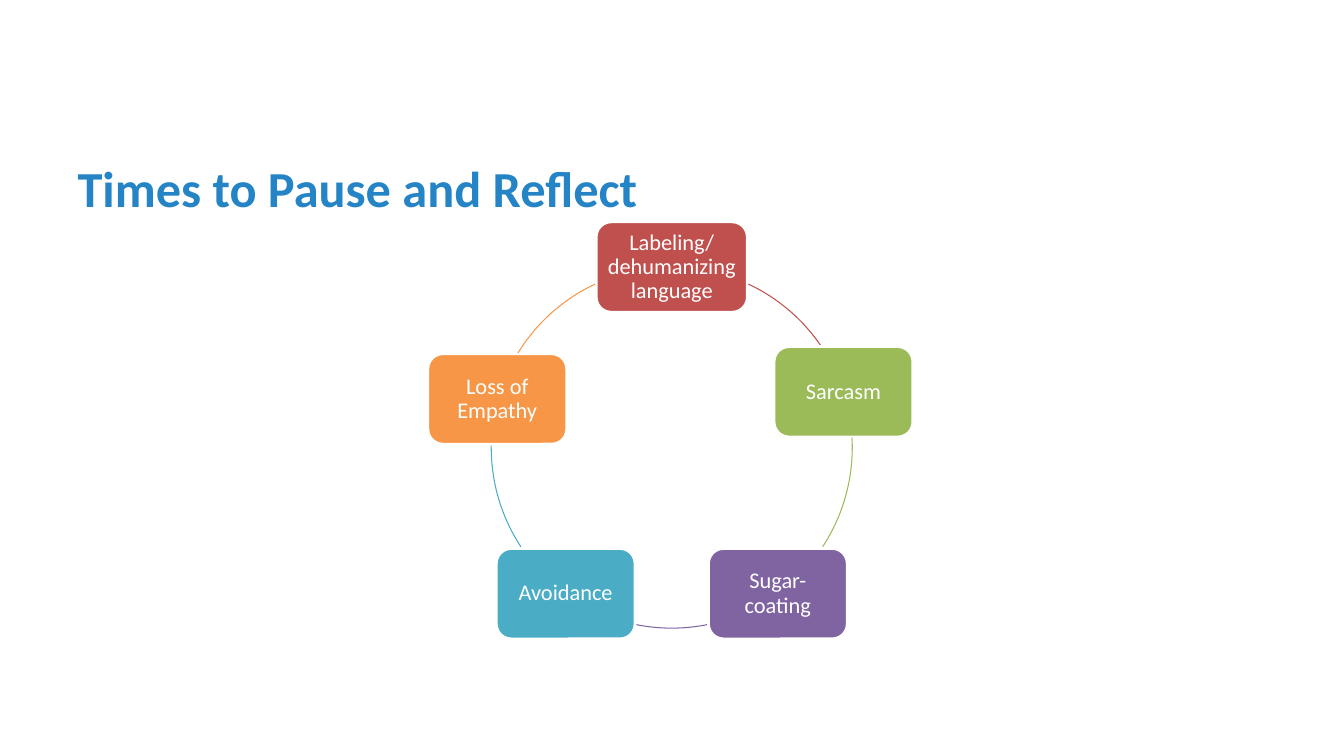
from math import cos, radians, sin

from pptx import Presentation
from pptx.dml.color import RGBColor
from pptx.enum.shapes import MSO_SHAPE
from pptx.enum.text import MSO_ANCHOR, PP_ALIGN
from pptx.util import Cm, Pt

ROUNDED, ARC = MSO_SHAPE.ROUNDED_RECTANGLE, MSO_SHAPE.ARC
MIDDLE = MSO_ANCHOR.MIDDLE
LEFT, CENTER = PP_ALIGN.LEFT, PP_ALIGN.CENTER
FONT = "Calibri"
NODE_WIDTH, NODE_HEIGHT = 3.5, 2.28
ARC_UNIT = 0.6  # adjustment value of one degree

# label, colour, width, shift from the ring, start and end degrees of the next arc
HABITS = [
    ("Labeling/ dehumanizing language", "C0504D", 3.81, (0, 0), (295.1, 325.5)),
    ("Sarcasm", "9BBB59", NODE_WIDTH, (0, 0), (356.8, 33.3)),
    ("Sugar-coating", "8064A2", NODE_WIDTH, (0, 0), (78.7, 101.5)),
    ("Avoidance", "4BACC6", NODE_WIDTH, (0, 0), (146.7, 181)),
    ("Loss of Empathy", "F79646", NODE_WIDTH, (-0.07, 0.18), (211.6, 244.9)),
]


def color(value):
    return RGBColor.from_string(value)


def style_paragraph(para, size, value, align, bold=False):
    para.alignment = align
    para.font.name = FONT
    para.font.size = Pt(size)
    para.font.bold = bold
    para.font.color.rgb = color(value)


def add_title(page, text, left, top, width, height):
    title = page.shapes.title
    title.left, title.top, title.width, title.height = map(
        Cm, (left, top, width, height))
    frame = title.text_frame
    frame.text = text
    frame.vertical_anchor = MIDDLE
    style_paragraph(frame.paragraphs[0], 36, "2584C6", LEFT, bold=True)


def add_node(page, text, fill, center_x, center_y, width):
    node = page.shapes.add_shape(
        ROUNDED, Cm(center_x - width / 2), Cm(center_y - NODE_HEIGHT / 2),
        Cm(width), Cm(NODE_HEIGHT))
    node.shadow.inherit = False
    node.fill.solid()
    node.fill.fore_color.rgb = color(fill)
    node.line.color.rgb = color("FFFFFF")
    node.line.width = Pt(2)
    frame = node.text_frame
    frame.word_wrap = True
    frame.vertical_anchor = MIDDLE
    frame.margin_left = frame.margin_right = Cm(0.15)
    frame.margin_top = frame.margin_bottom = Cm(0.15)
    frame.text = text
    para = frame.paragraphs[0]
    para.line_spacing = 0.9
    style_paragraph(para, 16, "FFFFFF", CENTER)


def add_arc(page, stroke, left, top, size, degrees):
    arc = page.shapes.add_shape(ARC, Cm(left), Cm(top), Cm(size), Cm(size))
    arc.shadow.inherit = False
    arc.fill.background()
    arc.line.color.rgb = color(stroke)
    arc.line.width = Pt(0.75)
    for index, angle in enumerate(degrees):
        arc.adjustments[index] = angle * ARC_UNIT


def add_cycle(page, left, top, size):
    """Spread the habits evenly, clockwise from the top, on a ring in a square box."""
    radius = size / 2
    for index, (text, fill, width, shift, degrees) in enumerate(HABITS):
        angle = radians(index * 360 / len(HABITS) - 90)
        center_x = left + radius + radius * cos(angle) + shift[0]
        center_y = top + radius + radius * sin(angle) + shift[1]
        add_node(page, text, fill, center_x, center_y, width)
        add_arc(page, fill, left, top, size, degrees)


def main():
    deck = Presentation()
    deck.slide_width, deck.slide_height = Cm(33.87), Cm(19.05)
    page = deck.slides.add_slide(deck.slide_layouts[5])
    add_title(page, "Times to Pause and Reflect", 1.7, 3.81, 30.48, 1.83)
    add_cycle(page, 12.38, 6.73, 9.1)
    deck.save("out.pptx")


if __name__ == "__main__":
    main()
